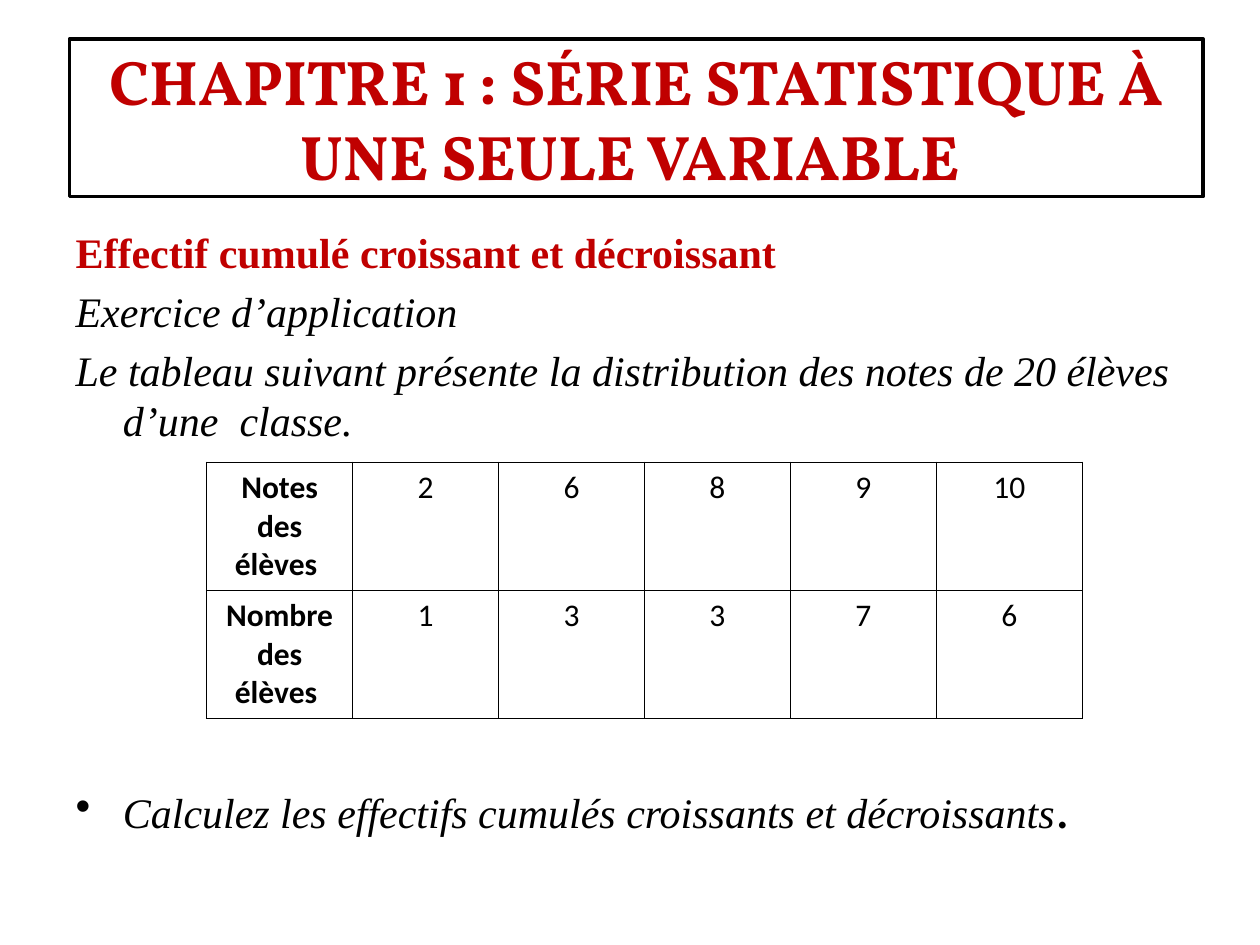
"""Build the statistics exercise slide on cumulative frequencies."""
from dataclasses import dataclass

from lxml.etree import SubElement
from pptx import Presentation
from pptx.dml.color import RGBColor
from pptx.enum.text import MSO_ANCHOR as Anchor, MSO_AUTO_SIZE as AutoSize, PP_ALIGN as Align
from pptx.oxml.ns import qn
from pptx.util import Pt

RED = RGBColor(0xC0, 0x00, 0x00)
BLACK = RGBColor(0x00, 0x00, 0x00)
WHITE = RGBColor(0xFF, 0xFF, 0xFF)
SERIF = "Times New Roman"
SANS = "Calibri"
DISPLAY = "Vollkorn"


@dataclass(frozen=True)
class Span:
    text: str
    font: str
    size: float
    color: RGBColor = BLACK
    bold: bool = False
    italic: bool = False


@dataclass(frozen=True)
class Line:
    spans: tuple[Span, ...]
    bullet: bool = False
    gap: float | None = None


@dataclass(frozen=True)
class Box:
    left: float
    top: float
    width: float
    height: float


TITLE_BOX = Box(39.6, 22.3, 648, 90)
BODY_BOX = Box(36, 126, 648, 356.4)
TABLE_BOX = Box(118.1, 264.2, 500.4, 146.4)

TITLE = Span("CHAPITRE 1 : SÉRIE STATISTIQUE À UNE SEULE VARIABLE ", DISPLAY, 36, RED, bold=True)
LINES = (
    Line((Span("Effectif cumulé croissant et décroissant", SERIF, 24, RED, bold=True),)),
    Line((Span("Exercice d’application", SERIF, 24, italic=True),)),
    Line((Span("Le tableau suivant présente la distribution des notes de 20 élèves d’une  classe.",
               SERIF, 24, italic=True),)),
    Line((Span("Calculez les effectifs cumulés croissants et décroissants", SERIF, 24, italic=True),
          Span(".", SANS, 32)), bullet=True, gap=187),
)
ROWS = (
    ("Notes des élèves ", "2", "6", "8", "9", "10"),
    ("Nombre des élèves ", "1", "3", "3", "7", "6"),
)


def place(shape, box: Box) -> None:
    shape.left, shape.top = Pt(box.left), Pt(box.top)
    shape.width, shape.height = Pt(box.width), Pt(box.height)


def add_span(para, span: Span) -> None:
    run = para.add_run()
    run.text = span.text
    font = run.font
    font.name, font.size = span.font, Pt(span.size)
    font.bold, font.italic = span.bold, span.italic
    font.color.rgb = span.color


def fill_title(shape) -> None:
    place(shape, TITLE_BOX)
    shape.fill.solid()
    shape.fill.fore_color.rgb = WHITE
    shape.line.color.rgb = BLACK
    shape.line.width = Pt(2)
    frame = shape.text_frame
    frame.auto_size = AutoSize.NONE
    frame.vertical_anchor = Anchor.MIDDLE
    para = frame.paragraphs[0]
    para.alignment = Align.CENTER
    add_span(para, TITLE)


def fill_body(shape, lines: tuple[Line, ...]) -> None:
    place(shape, BODY_BOX)
    frame = shape.text_frame
    frame.auto_size = AutoSize.NONE
    for index, line in enumerate(lines):
        para = frame.add_paragraph() if index else frame.paragraphs[0]
        if line.gap is not None:
            para.space_before = Pt(line.gap)
        if not line.bullet:
            SubElement(para._p.get_or_add_pPr(), qn("a:buNone"))
        for span in line.spans:
            add_span(para, span)


def add_borders(cell) -> None:
    properties = cell._tc.get_or_add_tcPr()
    for side in ("a:lnL", "a:lnR", "a:lnT", "a:lnB"):
        border = SubElement(properties, qn(side), w=str(Pt(1)))
        fill = SubElement(border, qn("a:solidFill"))
        SubElement(fill, qn("a:srgbClr"), val=str(BLACK))


def add_grades(page, box: Box, rows: tuple[tuple[str, ...], ...]) -> None:
    frame = page.shapes.add_table(len(rows), len(rows[0]), Pt(box.left), Pt(box.top),
                                  Pt(box.width), Pt(box.height))
    table = frame.table
    table.first_row = table.horz_banding = False
    for row_index, values in enumerate(rows):
        for column_index, value in enumerate(values):
            cell = table.cell(row_index, column_index)
            add_borders(cell)
            cell.fill.background()
            para = cell.text_frame.paragraphs[0]
            para.alignment = Align.CENTER
            add_span(para, Span(value, SANS, 18, bold=column_index == 0))


def main() -> None:
    deck = Presentation()
    deck.slide_width, deck.slide_height = Pt(720), Pt(540)
    page = deck.slides.add_slide(deck.slide_layouts[1])
    fill_title(page.shapes.title)
    fill_body(page.placeholders[1], LINES)
    add_grades(page, TABLE_BOX, ROWS)
    deck.save("out.pptx")


if __name__ == "__main__":
    main()
